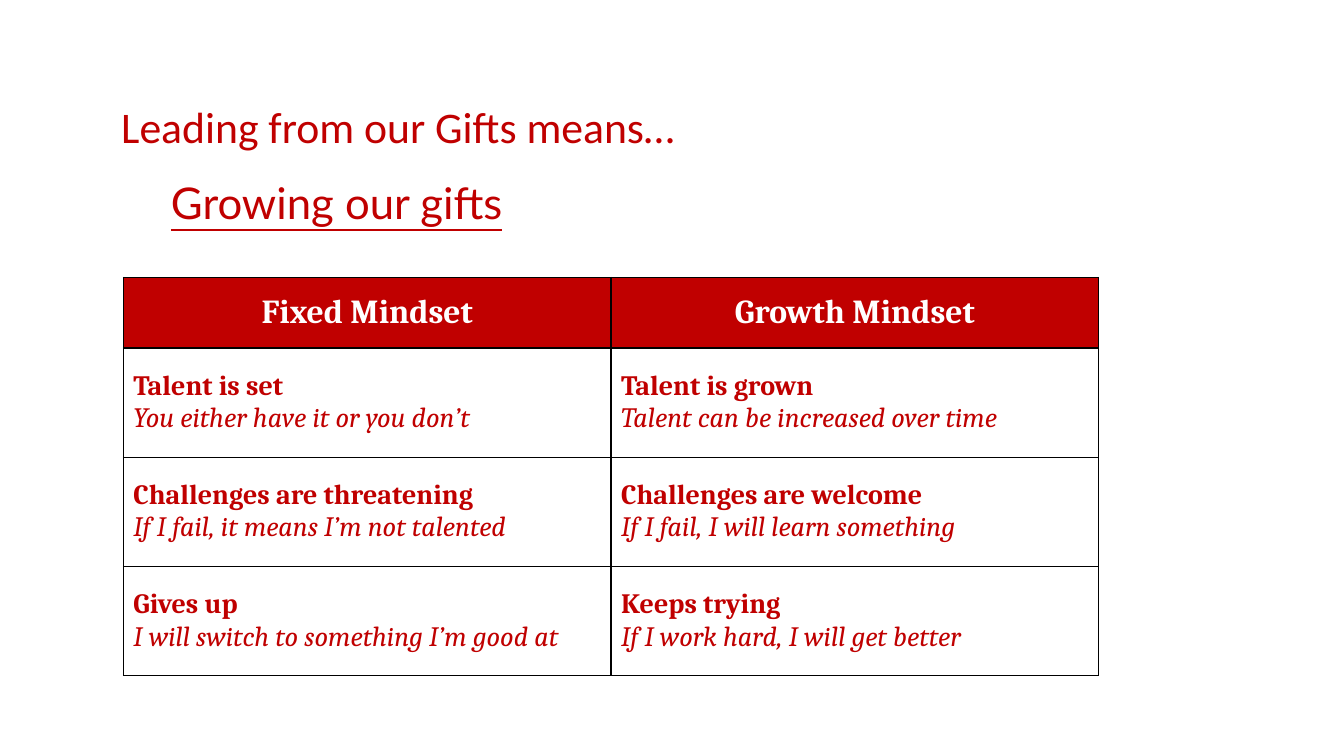
from lxml import etree
from pptx import Presentation
from pptx import util as u
from pptx.dml.color import RGBColor
from pptx.enum import text
from pptx.oxml.ns import qn

COLOURS = {"red": "C00000", "white": "FFFFFF", "black": "000000"}
MINDSETS = [
    ("Fixed Mindset", "Growth Mindset"),
    ("Talent is set\nYou either have it or you don’t",
     "Talent is grown\nTalent can be increased over time"),
    ("Challenges are threatening\nIf I fail, it means I’m not talented",
     "Challenges are welcome\nIf I fail, I will learn something"),
    ("Gives up\nI will switch to something I’m good at",
     "Keeps trying\nIf I work hard, I will get better"),
]


class MindsetPage:
    """Holds the style and the current slide, and adds its elements."""

    def __init__(self, deck):
        self.page = deck.slides.add_slide(deck.slide_layouts[5])
        self.heading_size = 31.2

    def style(self, para, font, size, colour, **flags):
        for span in para.runs:
            span.font.name = font
            span.font.size = u.Pt(size)
            span.font.color.rgb = RGBColor.from_string(COLOURS[colour])
            for name, value in flags.items():
                setattr(span.font, name, value)

    def heading(self, box, wording, font, **flags):
        frame = box.text_frame
        frame.text = wording
        frame.word_wrap = True
        frame.auto_size = text.MSO_AUTO_SIZE.NONE
        frame.vertical_anchor = text.MSO_ANCHOR.MIDDLE
        para = frame.paragraphs[0]
        para.alignment = text.PP_ALIGN.LEFT
        self.style(para, font, self.heading_size, "red", **flags)

    def title(self, wording, left, top, width, height):
        box = self.page.shapes.title
        box.left, box.top = u.Cm(left), u.Cm(top)
        box.width, box.height = u.Cm(width), u.Cm(height)
        self.heading(box, wording, "Calibri")

    def subtitle(self, wording, *place):
        box = self.page.shapes.add_textbox(*map(u.Cm, place))
        self.heading(box, wording, "Lato", underline=True)

    def borders(self, cell):
        properties = cell._tc.get_or_add_tcPr()
        for position, side in enumerate(("lnL", "lnR", "lnT", "lnB")):
            line = etree.Element(qn(f"a:{side}"), w=str(u.Pt(1)))
            fill = etree.SubElement(line, qn("a:solidFill"))
            etree.SubElement(fill, qn("a:srgbClr"), val=COLOURS["black"])
            properties.insert(position, line)

    def cell(self, cell, wording, header):
        cell.text_frame.text = wording
        cell.vertical_anchor = text.MSO_ANCHOR.MIDDLE
        cell.fill.solid()
        background = COLOURS["red" if header else "white"]
        cell.fill.fore_color.rgb = RGBColor.from_string(background)
        self.borders(cell)
        for index, para in enumerate(cell.text_frame.paragraphs):
            if header:
                para.alignment = text.PP_ALIGN.CENTER
                self.style(para, "Cambria", 24, "white", bold=True)
            else:
                self.style(para, "Cambria", 20, "red", bold=index == 0, italic=index == 1)

    def table(self, rows, left, top, column_width, header_height, row_height):
        heights = [header_height] + [row_height] * (len(rows) - 1)
        columns = len(rows[0])
        table = self.page.shapes.add_table(
            len(rows), columns, u.Cm(left), u.Cm(top),
            u.Cm(columns * column_width), u.Cm(sum(heights))).table
        for column in table.columns:
            column.width = u.Cm(column_width)
        for index, (wordings, height) in enumerate(zip(rows, heights)):
            table.rows[index].height = u.Cm(height)
            for number, wording in enumerate(wordings):
                self.cell(table.cell(index, number), wording, index == 0)


def main():
    deck = Presentation()
    deck.slide_width, deck.slide_height = u.Cm(33.87), u.Cm(19.05)
    page = MindsetPage(deck)
    page.title("Leading from our Gifts means…", 2.8, 2.29, 17.27, 1.78)
    page.subtitle("Growing our gifts", 4.06, 4.19, 27.4, 1.78)
    page.table(MINDSETS, 3.11, 6.99, 12.29, 1.78, 2.75)
    deck.save("out.pptx")


if __name__ == "__main__":
    main()
